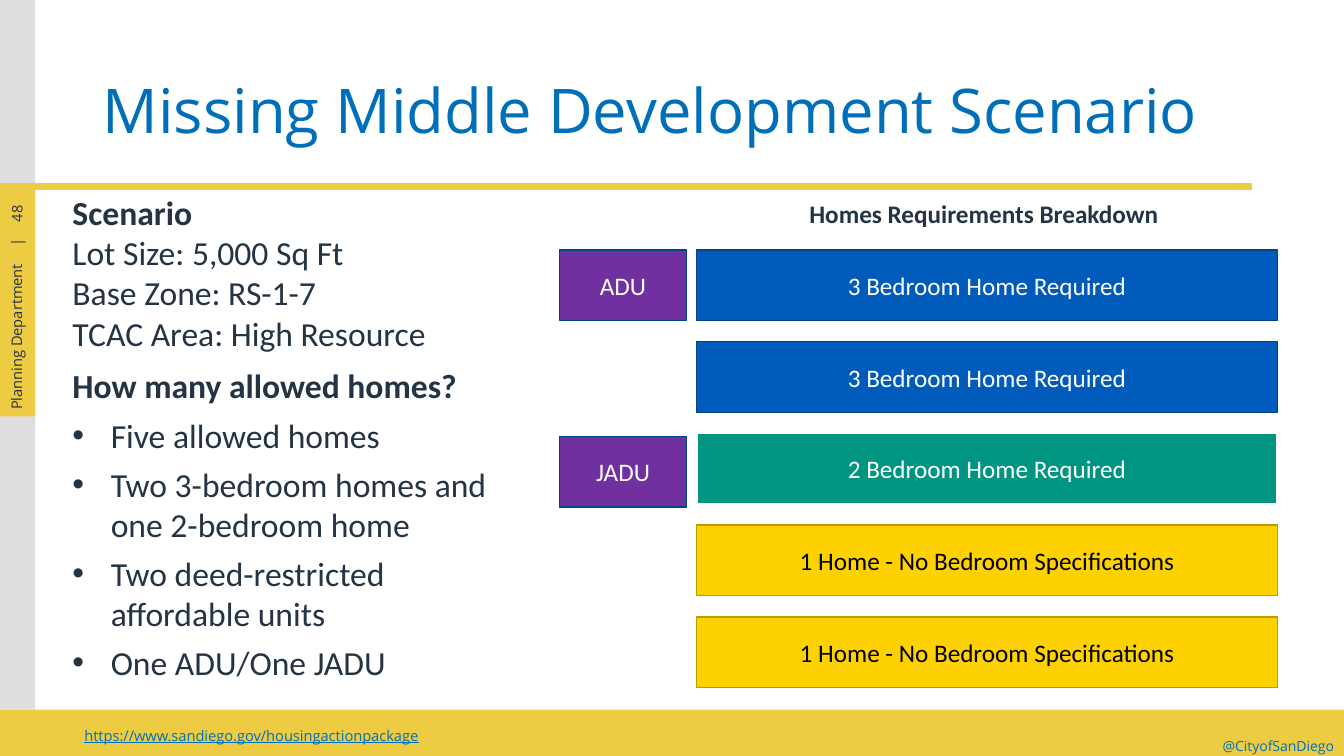
from pptx import Presentation
from pptx.dml.color import RGBColor
from pptx.enum.shapes import MSO_CONNECTOR as Connector, MSO_SHAPE as Shape
from pptx.enum.text import MSO_ANCHOR as Anchor, MSO_AUTO_SIZE as AutoSize, PP_ALIGN as Align
from pptx.oxml.ns import qn
from pptx.util import Inches, Pt
from lxml.etree import SubElement

TITLE = "Missing Middle Development Scenario"
SCENARIO = ["Scenario", "Lot Size: 5,000 Sq Ft", "Base Zone: RS-1-7", "TCAC Area: High Resource"]
QUESTION = "How many allowed homes?"
ANSWERS = [
    "Five allowed homes",
    "Two 3-bedroom homes and one 2-bedroom home",
    "Two deed-restricted affordable units",
    "One ADU/One JADU",
]
BREAKDOWN = "Homes Requirements Breakdown"
STYLES = {
    "three": dict(fill="005BBB", line="00438A", weight=1, color="FFFFFF"),
    "two": dict(fill="009581", line="FFFFFF", weight=1.5, color="FFFFFF"),
    "any": dict(fill="FED100", line="BC9B00", weight=1, color="000000"),
    "accessory": dict(fill="7030A0", line="00438A", weight=1, color="FFFFFF"),
}
HOMES = [
    ("3 Bedroom Home Required", "three"),
    ("3 Bedroom Home Required", "three"),
    ("2 Bedroom Home Required", "two"),
    ("1 Home - No Bedroom Specifications", "any"),
    ("1 Home - No Bedroom Specifications", "any"),
]
ACCESSORIES = [("ADU", 2.48), ("JADU", 4.33)]
LINK = "https://www.sandiego.gov/housingactionpackage"
HANDLE = "@CityofSanDiego"
PAGE, DEPARTMENT = "48", "Planning Department\t|"

WIDTH, HEIGHT = 13.33, 7.5
FOOTER_TOP, RAIL, RULE_Y = 7.04, 0.35, 1.85
LEFT_X, LEFT_W = 0.62, 4.69
HOME_X, HOME_Y, HOME_W, BAR_H, PITCH = 6.91, 2.48, 5.76, 0.7, 0.91
ACCESSORY_X, ACCESSORY_W = 5.55, 1.26
GOLD, GREY, BLUE, INK = "EDCC43", "D9D9D9", "006FBA", "243444"
BODY = dict(name="Calibri", size=Pt(24), color=INK, bold=False)
HEAD = BODY | dict(bold=True)
BAR = BODY | dict(size=Pt(18))
SMALL = dict(name="Open Sans", size=Pt(10.5), color=INK)

deck = Presentation()
deck.slide_width, deck.slide_height = Inches(WIDTH), Inches(HEIGHT)
slide = deck.slides.add_slide(deck.slide_layouts[6])


def rgb(value):
    return RGBColor.from_string(value)


def write(paragraph, text, font, align=Align.LEFT):
    run = paragraph.add_run()
    run.text = text
    paragraph.alignment = align
    for key, value in font.items():
        if key == "color":
            run.font.color.rgb = rgb(value)
        else:
            setattr(run.font, key, value)


def text_box(box, lines, fonts, align=Align.LEFT, anchor=Anchor.TOP, grow=False, turn=0):
    holder = slide.shapes.add_textbox(*map(Inches, box))
    holder.rotation = turn
    frame = holder.text_frame
    frame.word_wrap = True
    frame.vertical_anchor = anchor
    frame.auto_size = AutoSize.SHAPE_TO_FIT_TEXT if grow else AutoSize.NONE
    for index, (line, font) in enumerate(zip(lines, fonts)):
        paragraph = frame.add_paragraph() if index else frame.paragraphs[0]
        write(paragraph, line, font, align)
    return frame.paragraphs


def block(box, fill, line=None, weight=1):
    rect = slide.shapes.add_shape(Shape.RECTANGLE, *map(Inches, box))
    rect.shadow.inherit = False
    rect.fill.solid()
    rect.fill.fore_color.rgb = rgb(fill)
    if line:
        rect.line.color.rgb = rgb(line)
        rect.line.width = Pt(weight)
    else:
        rect.line.fill.background()
    return rect


def bar(box, label, style):
    look = STYLES[style]
    frame = block(box, look["fill"], look["line"], look["weight"]).text_frame
    frame.word_wrap = True
    frame.vertical_anchor = Anchor.MIDDLE
    write(frame.paragraphs[0], label, BAR | dict(color=look["color"]), Align.CENTER)


block((0, FOOTER_TOP, WIDTH, HEIGHT - FOOTER_TOP), GOLD)
text_box((11.67, 7.27, 1.66, 0.27), [HANDLE], [SMALL | dict(size=Pt(10), color=BLUE)],
         Align.RIGHT, grow=True)
text_box((0.24, 7.09, 4.51, 0.41), [LINK], [SMALL | dict(color=BLUE, underline=True)],
         Align.CENTER, Anchor.MIDDLE)

rail = block((0, 0, RAIL, FOOTER_TOP), GREY)
rail_color = rail.fill._xPr.find(qn("a:solidFill"))[0]
SubElement(rail_color, qn("a:alpha"), val="85000")

rule = slide.shapes.add_connector(
    Connector.STRAIGHT, 0, Inches(RULE_Y), Inches(12.42), Inches(RULE_Y))
rule.line.color.rgb = rgb(GOLD)
rule.line.width = Pt(4.5)
SubElement(rule._element.spPr, qn("a:effectLst"))

block((0, 1.82, RAIL, 2.31), GOLD)
text_box((-0.06, 1.97, 0.45, 0.3), [PAGE], [SMALL], Align.CENTER, Anchor.MIDDLE, turn=270)
department = text_box((-0.81, 3.05, 1.95, 0.28), [DEPARTMENT], [SMALL], grow=True, turn=270)[0]
tabs = SubElement(department._p.get_or_add_pPr(), qn("a:tabLst"))
SubElement(tabs, qn("a:tab"), pos=str(Inches(1.62)), algn="l")

title = text_box((0.92, 0.4, 11.5, 1.45), [TITLE],
                 [SMALL | dict(size=Pt(44), color=BLUE)], anchor=Anchor.MIDDLE)[0]
title.line_spacing = 0.9

text_box((LEFT_X, RULE_Y, LEFT_W, 1.72), SCENARIO, [HEAD] + [BODY] * 3, grow=True)
text_box((LEFT_X, 3.57, LEFT_W, 0.5), [QUESTION], [HEAD], grow=True)
for answer in text_box((LEFT_X, 4.07, LEFT_W, 2.78), ANSWERS, [BODY] * len(ANSWERS), grow=True):
    answer.space_after = Pt(6)
    layout = answer._p.get_or_add_pPr()
    layout.set("marL", str(Inches(0.38)))
    layout.set("indent", str(-Inches(0.38)))
    SubElement(layout, qn("a:buFont"), typeface="Arial")
    SubElement(layout, qn("a:buChar"), char="•")

text_box((7.06, 1.92, 5.4, 0.4), [BREAKDOWN], [BAR | dict(bold=True)], Align.CENTER, grow=True)
for row, (label, style) in enumerate(HOMES):
    bar((HOME_X, HOME_Y + row * PITCH, HOME_W, BAR_H), label, style)
for label, top in ACCESSORIES:
    bar((ACCESSORY_X, top, ACCESSORY_W, BAR_H), label, "accessory")

deck.save("out.pptx")
